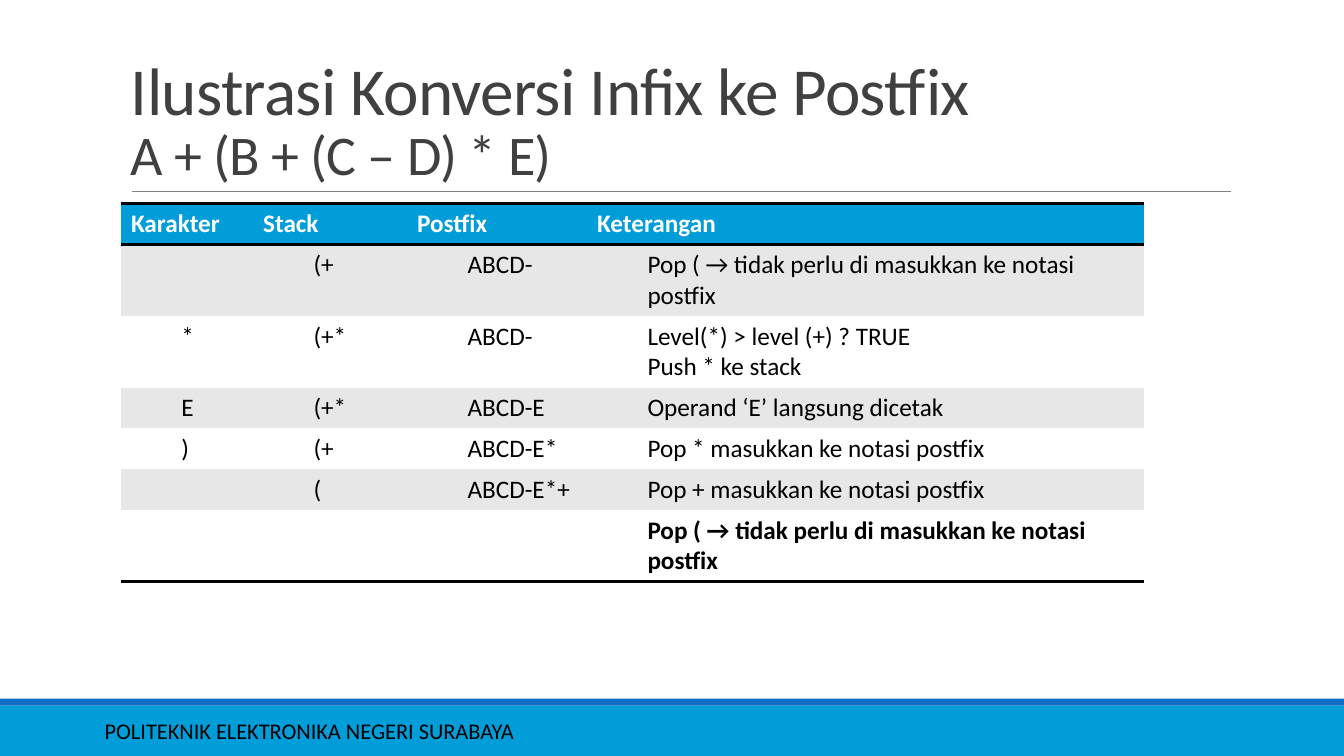
from dataclasses import dataclass

from lxml import etree
from pptx import Presentation
from pptx import util as u
from pptx.dml.color import RGBColor
from pptx.enum import shapes, text
from pptx.oxml.ns import qn

WIDTH, HEIGHT = u.Inches(13.33), u.Inches(7.5)
FONT = "Calibri"
BLACK, WHITE, BLUE, GREY = "000000", "FFFFFF", "009DD9", "E7E7E7"
TITLE_COLOR = "404040"


@dataclass
class Area:
    """Left, top, width and height in percent of the slide."""
    left: float
    top: float
    width: float
    height: float

    def emu(self) -> tuple:
        return x(self.left), y(self.top), x(self.width), y(self.height)


@dataclass
class Step:
    character: str
    stack: str
    postfix: str
    note: str
    lines: int = 1
    bold: bool = False

    def cells(self) -> tuple:
        return self.character, self.stack, self.postfix, self.note


BARS = [(Area(0, 93.33, 100, 6.67), BLUE), (Area(0, 92.4, 100, 0.93), "0F6FC6")]
HEADINGS = ("Karakter", "Stack", "Postfix", "Keterangan")
COLUMNS = (9.83, 11.46, 13.39, 41.48)
ROW = 5.4
EXTRA_LINE = 4.07
STEPS = [
    Step("", "(+", "ABCD-", "Pop ( → tidak perlu di masukkan ke notasi postfix", 2),
    Step("*", "(+*", "ABCD-", "Level(*) > level (+) ? TRUE\nPush * ke stack", 2),
    Step("E", "(+*", "ABCD-E", "Operand ‘E’ langsung dicetak"),
    Step(")", "(+", "ABCD-E*", "Pop * masukkan ke notasi postfix"),
    Step("", "(", "ABCD-E*+", "Pop + masukkan ke notasi postfix"),
    Step("", "", "", "Pop ( → tidak perlu di masukkan ke notasi postfix", 2, True),
]


def x(percent: float) -> int:
    return round(WIDTH * percent / 100)


def y(percent: float) -> int:
    return round(HEIGHT * percent / 100)


def rgb(color: str) -> RGBColor:
    return RGBColor.from_string(color)


def add_text(p, words: str, size: float = 18, color: str = BLACK,
             bold: bool = False, spacing: float = 0) -> None:
    r = p.add_run()
    r.text = words
    r.font.name, r.font.size, r.font.bold = FONT, u.Pt(size), bold
    r.font.color.rgb = rgb(color)
    if spacing:
        r._r.get_or_add_rPr().set("spc", str(round(spacing * 100)))


def add_box(s, area: Area, anchor):
    tf = s.shapes.add_textbox(*area.emu()).text_frame
    tf.word_wrap = True
    tf.vertical_anchor = anchor
    return tf.paragraphs[0]


def add_bar(s, area: Area, color: str) -> None:
    sp = s.shapes.add_shape(shapes.MSO_SHAPE.RECTANGLE, *area.emu())
    sp.shadow.inherit = False
    sp.fill.solid()
    sp.fill.fore_color.rgb = rgb(color)
    sp.line.fill.background()


def add_rule(s, left: float, right: float, top: float) -> None:
    line = s.shapes.add_connector(shapes.MSO_CONNECTOR.STRAIGHT,
                                  x(left), y(top), x(right), y(top))
    line.line.color.rgb = rgb("808080")
    line.line.width = u.Pt(0.5)
    etree.SubElement(line._element.spPr, qn("a:effectLst"))


def style_cell(cell, fill: str, borders: str = "") -> None:
    tcPr = cell._tc.get_or_add_tcPr()
    for side in borders:
        ln = etree.SubElement(tcPr, qn(f"a:ln{side}"), w=str(u.Pt(2)))
        solid = etree.SubElement(ln, qn("a:solidFill"))
        etree.SubElement(solid, qn("a:srgbClr"), val=BLACK)
    cell.fill.solid()
    cell.fill.fore_color.rgb = rgb(fill)


def fill_step_cell(cell, words: str, bold: bool) -> None:
    tf = cell.text_frame
    for i, line in enumerate(words.split("\n")):
        p = tf.add_paragraph() if i else tf.paragraphs[0]
        if not line:
            p.font.size = u.Pt(18)
            continue
        p.level = 1
        pPr = p._p.get_or_add_pPr()
        pPr.set("marL", str(u.Inches(0.5)))
        pPr.set("indent", "0")
        add_text(p, line, bold=bold)


def add_steps_table(s, left: float, top: float) -> None:
    heights = [ROW] + [ROW + EXTRA_LINE * (step.lines - 1) for step in STEPS]
    area = Area(left, top, sum(COLUMNS), sum(heights))
    table = s.shapes.add_table(len(heights), len(COLUMNS), *area.emu()).table
    table.horz_banding = table.first_row = False
    # "No Style, No Grid"
    table._tbl.tblPr.find(qn("a:tableStyleId")).text = "{2D5ABB26-0587-4C30-8999-92F81FD0307C}"
    for column, width in zip(table.columns, COLUMNS):
        column.width = x(width)
    for row, height in zip(table.rows, heights):
        row.height = y(height)

    for col, heading in enumerate(HEADINGS):
        cell = table.cell(0, col)
        style_cell(cell, BLUE, "TB")
        add_text(cell.text_frame.paragraphs[0], heading, color=WHITE, bold=True)
    for row, step in enumerate(STEPS, start=1):
        for col, words in enumerate(step.cells()):
            cell = table.cell(row, col)
            style_cell(cell, GREY if row % 2 else WHITE,
                       "B" if row == len(STEPS) else "")
            fill_step_cell(cell, words, step.bold)


def main() -> None:
    prs = Presentation()
    prs.slide_width, prs.slide_height = WIDTH, HEIGHT
    s = prs.slides.add_slide(prs.slide_layouts[6])

    # Footer bars, title rule and footer text
    for area, color in BARS:
        add_bar(s, area, color)
    add_rule(s, 9.83, 91.6, 25.33)
    p = add_box(s, Area(7.05, 94, 63.1, 5.33), text.MSO_ANCHOR.MIDDLE)
    add_text(p, "POLITEKNIK ELEKTRONIKA NEGERI SURABAYA", size=16)

    # Title with the expression below it
    p = add_box(s, Area(9, 4.13, 82.5, 21.2), text.MSO_ANCHOR.BOTTOM)
    p.line_spacing = 0.85
    add_text(p, "Ilustrasi Konversi Infix ke Postfix", size=48, color=TITLE_COLOR, spacing=-0.5)
    p.add_line_break()
    add_text(p, "A + (B + (C – D) * E)", size=40, color=TITLE_COLOR, spacing=-0.5)

    # Conversion steps
    add_steps_table(s, 9, 26.93)

    prs.save("out.pptx")


if __name__ == "__main__":
    main()
